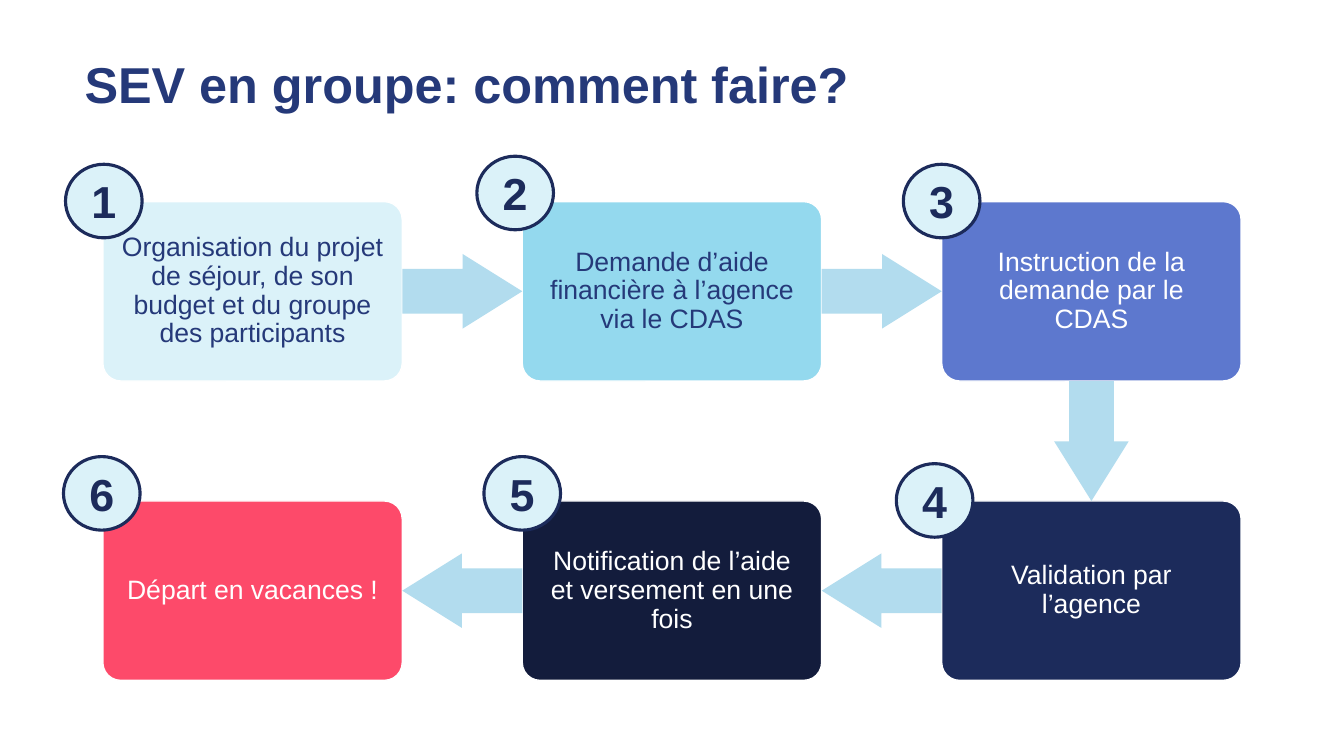
import pptx
import pptx.util
from pptx.dml.color import RGBColor
from pptx.enum.shapes import MSO_SHAPE
from pptx.enum.text import MSO_ANCHOR, PP_ALIGN
from pptx.util import Inches

WHITE = RGBColor(0xFF, 0xFF, 0xFF)
BLUE = RGBColor(0x25, 0x39, 0x79)
NAVY = RGBColor(0x1C, 0x2B, 0x5B)
MIDNIGHT = RGBColor(0x13, 0x1C, 0x3C)
PERIWINKLE = RGBColor(0x5D, 0x78, 0xCE)
SKY = RGBColor(0x94, 0xD9, 0xEE)
ICE = RGBColor(0xDB, 0xF2, 0xF9)
CORAL = RGBColor(0xFD, 0x4A, 0x6A)
ARROW_BLUE = RGBColor(0xB2, 0xDC, 0xEE)

LEFT, TOP = 1.02, 2.0
BOX_W, BOX_H = 2.97, 1.78
GAP = 1.19
ARROW_H = 0.74
STEP_X, STEP_Y = BOX_W + GAP, BOX_H + GAP
BADGE_W, BADGE_H = 0.76, 0.73

# column, row, fill, text colour, badge left, badge top, wording
STEPS = [
    (0, 0, ICE, BLUE, 0.65, 1.63,
     "Organisation du projet de séjour, de son budget et du groupe des participants"),
    (1, 0, SKY, BLUE, 4.73, 1.55, "Demande d’aide financière à l’agence via le CDAS"),
    (2, 0, PERIWINKLE, WHITE, 8.96, 1.63, "Instruction de la demande par le CDAS"),
    (2, 1, NAVY, WHITE, 8.89, 4.6, "Validation par l’agence"),
    (1, 1, MIDNIGHT, WHITE, 4.8, 4.53, "Notification de l’aide et versement en une fois"),
    (0, 1, CORAL, WHITE, 0.63, 4.53, "Départ en vacances !"),
]


def add_filled(kind, left, top, width, height, fill, line=None, line_width=1):
    shape = page.shapes.add_shape(
        kind, Inches(left), Inches(top), Inches(width), Inches(height))
    shape.shadow.inherit = False
    shape.fill.solid()
    shape.fill.fore_color.rgb = fill
    if line is None:
        shape.line.fill.background()
    else:
        shape.line.color.rgb = line
        shape.line.width = pptx.util.Pt(line_width)
    return shape


def write(box, text, size, color, bold=False, align=PP_ALIGN.CENTER, spacing=1.0):
    frame = box.text_frame
    frame.word_wrap = True
    frame.vertical_anchor = MSO_ANCHOR.MIDDLE
    frame.text = text
    para = frame.paragraphs[0]
    para.alignment = align
    para.line_spacing = spacing
    font = para.runs[0].font
    font.name = "Arial"
    font.size = pptx.util.Pt(size)
    font.bold = bold
    font.color.rgb = color


deck = pptx.Presentation()
deck.slide_width, deck.slide_height = Inches(13.33), Inches(7.5)
page = deck.slides.add_slide(deck.slide_layouts[6])

title = page.shapes.add_textbox(Inches(0.74), Inches(0.47), Inches(11.5), Inches(0.78))
write(title, "SEV en groupe: comment faire?", 36, BLUE, True, PP_ALIGN.LEFT, 0.9)

for column, row, fill, color, _, _, wording in STEPS:
    box = add_filled(MSO_SHAPE.ROUNDED_RECTANGLE, LEFT + column * STEP_X,
                     TOP + row * STEP_Y, BOX_W, BOX_H, fill, WHITE)
    box.adjustments[0] = 0.1
    frame = box.text_frame
    frame.margin_left = frame.margin_right = Inches(0.13)
    frame.margin_top = frame.margin_bottom = Inches(0.13)
    write(box, wording, 19, color, spacing=0.9)

# Each arrow sits halfway between the centres of two consecutive steps
for start, end in zip(STEPS, STEPS[1:]):
    center_x = LEFT + BOX_W / 2 + (start[0] + end[0]) / 2 * STEP_X
    center_y = TOP + BOX_H / 2 + (start[1] + end[1]) / 2 * STEP_Y
    arrow = add_filled(MSO_SHAPE.RIGHT_ARROW, center_x - GAP / 2,
                       center_y - ARROW_H / 2, GAP, ARROW_H, ARROW_BLUE)
    arrow.adjustments[0] = 0.6
    arrow.adjustments[1] = 0.8
    if end[1] > start[1]:
        arrow.rotation = 90
    elif end[0] < start[0]:
        arrow.rotation = 180

for number, (_, _, _, _, left, top, _) in enumerate(STEPS, 1):
    badge = add_filled(MSO_SHAPE.OVAL, left, top, BADGE_W, BADGE_H, ICE, NAVY, 2.25)
    write(badge, str(number), 32, NAVY, True)

deck.save("out.pptx")
